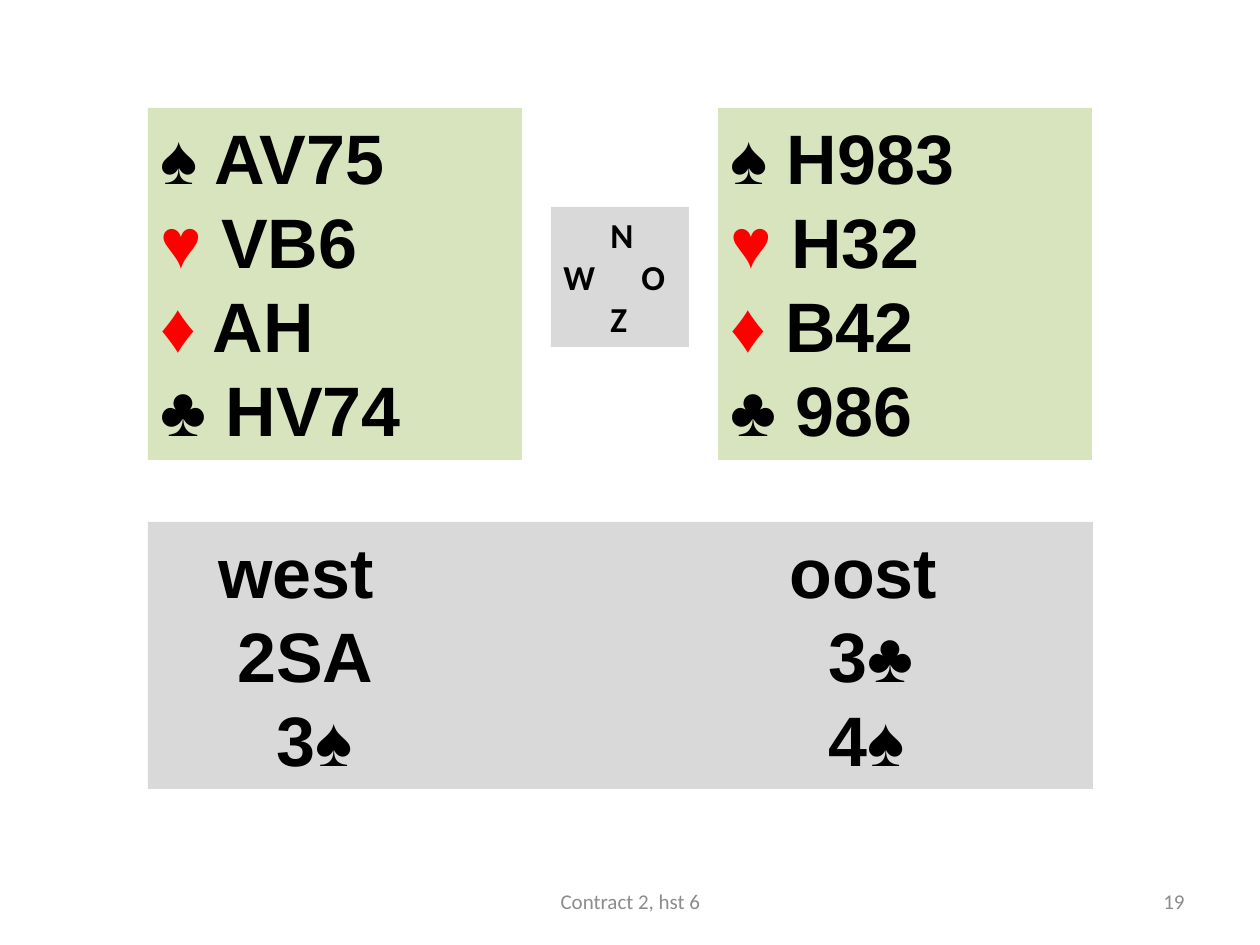
from pptx import Presentation
from pptx.dml.color import RGBColor
from pptx.enum.shapes import MSO_SHAPE as SHAPE
from pptx.enum.text import MSO_ANCHOR as ANCHOR, PP_ALIGN as ALIGN
from pptx.oxml.ns import qn
from pptx.util import Emu, Pt
from lxml.etree import SubElement

SCALE = 914400 / 126
BLACK = RGBColor(0x00, 0x00, 0x00)
RED = RGBColor(0xFF, 0x00, 0x00)
GREEN = RGBColor(0xD7, 0xE4, 0xBD)
GREY = RGBColor(0xD9, 0xD9, 0xD9)
FOOTER_GREY = RGBColor(0x8C, 0x8C, 0x8C)
SUITS = [("♠", BLACK), ("♥", RED), ("♦", RED), ("♣", BLACK)]


def px(n):
    return Emu(round(n * SCALE))


def add_text(p, text, size=40, font="Arial", color=BLACK, bold=True):
    r = p.add_run()
    r.text = text
    r.font.size = Pt(size)
    r.font.name = font
    r.font.bold = bold
    r.font.color.rgb = color


def add_panel(slide, box, fill):
    sp = slide.shapes.add_shape(SHAPE.RECTANGLE, *map(px, box))
    sp.shadow.inherit = False
    sp.fill.solid()
    sp.fill.fore_color.rgb = fill
    sp.line.fill.background()
    tf = sp.text_frame
    tf.word_wrap = True
    tf.vertical_anchor = ANCHOR.TOP
    return tf


def add_line(tf, index, spacing, stops=()):
    p = tf.paragraphs[0] if index == 0 else tf.add_paragraph()
    p.alignment = ALIGN.LEFT
    p.line_spacing = Pt(spacing)
    if stops:
        tabs = SubElement(p._p.get_or_add_pPr(), qn("a:tabLst"))
        for stop in stops:
            SubElement(tabs, qn("a:tab"), pos=str(px(stop)), algn="l")
    return p


def add_hand(slide, box, holdings):
    tf = add_panel(slide, box, GREEN)
    for i, ((suit, color), cards) in enumerate(zip(SUITS, holdings)):
        p = add_line(tf, i, 48)
        add_text(p, suit, color=color)
        add_text(p, " " + cards)


def add_compass(slide, box):
    tf = add_panel(slide, box, GREY)
    for i, text in enumerate(["\tN", "W\t\tO", "\tZ"]):
        p = add_line(tf, i, 24, (47, 78))
        add_text(p, text, size=20, font="Calibri")


def add_auction(slide, box, rounds):
    tf = add_panel(slide, box, GREY)
    for i, (west, west_x, east, east_x) in enumerate(rounds):
        p = add_line(tf, i, 48, (west_x, east_x))
        add_text(p, f"\t{west}\t{east}")


def add_footer(slide, box, text, align):
    tf = slide.shapes.add_textbox(*map(px, box)).text_frame
    tf.word_wrap = True
    tf.vertical_anchor = ANCHOR.MIDDLE
    p = tf.paragraphs[0]
    p.alignment = align
    add_text(p, text, size=12, font="Calibri", color=FOOTER_GREY, bold=False)


def main():
    prs = Presentation()
    prs.slide_width, prs.slide_height = px(1260), px(945)
    slide = prs.slides.add_slide(prs.slide_layouts[6])
    add_hand(slide, (718, 108, 374, 352), ["H983", "H32", "B42", "986"])
    add_compass(slide, (551, 207, 138, 140))
    add_auction(slide, (148, 522, 945, 267), [
        ("west", 58, "oost", 629),
        ("2SA", 77, "3♣", 668),
        ("3♠", 116, "4♠", 668),
    ])
    add_hand(slide, (148, 108, 374, 352), ["AV75", "VB6", "AH", "HV74"])
    add_footer(slide, (903, 876, 294, 50), "19", ALIGN.RIGHT)
    add_footer(slide, (431, 876, 399, 50), "Contract 2, hst 6", ALIGN.CENTER)
    prs.save("out.pptx")


if __name__ == "__main__":
    main()
